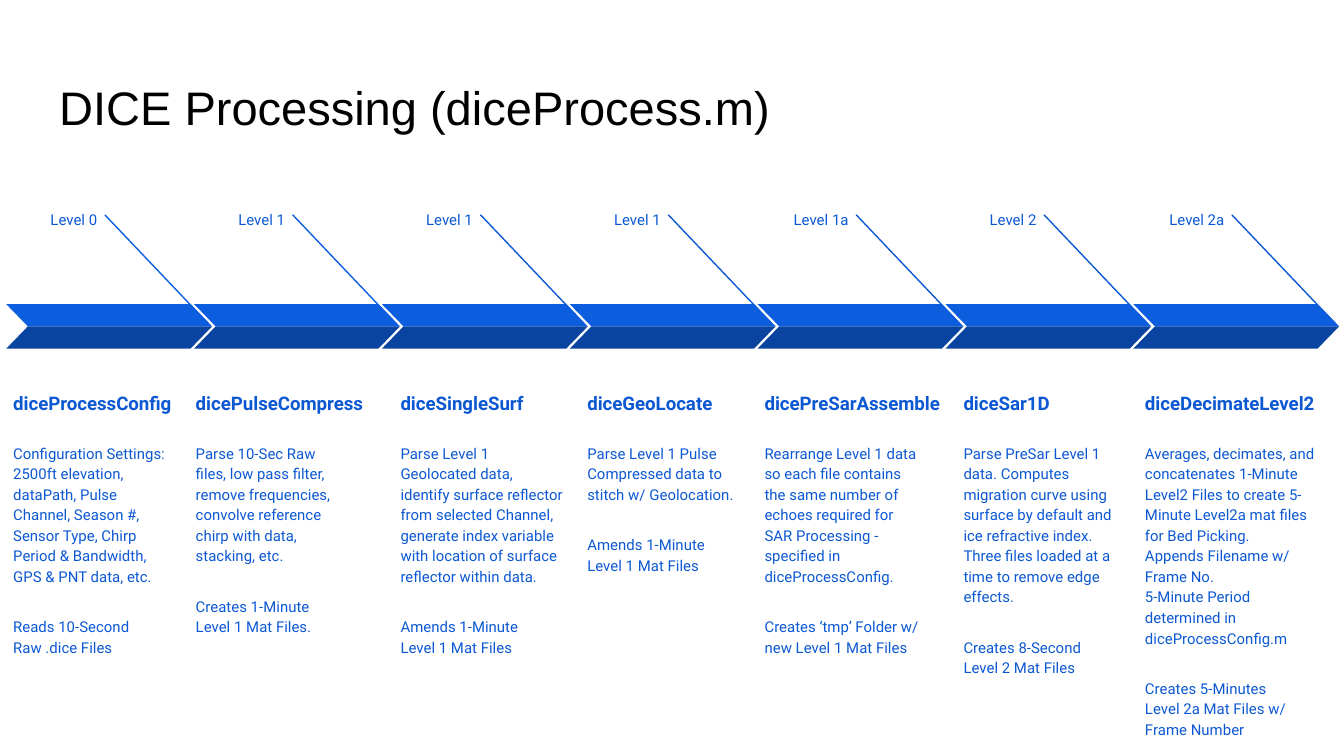
from copy import deepcopy

from lxml import etree
from pptx import Presentation
from pptx.dml.color import RGBColor
from pptx.enum.shapes import MSO_CONNECTOR, MSO_SHAPE
from pptx.enum.text import MSO_ANCHOR, PP_ALIGN
from pptx.oxml.ns import qn
from pptx.util import Cm, Pt

LEFT, RIGHT = PP_ALIGN.LEFT, PP_ALIGN.RIGHT
TOP, BOTTOM = MSO_ANCHOR.TOP, MSO_ANCHOR.BOTTOM
PARALLELOGRAM = MSO_SHAPE.PARALLELOGRAM
STRAIGHT = MSO_CONNECTOR.STRAIGHT

BLACK = RGBColor(0x00, 0x00, 0x00)
BRIGHT = RGBColor(0x0D, 0x5D, 0xDF)
DARK = RGBColor(0x09, 0x44, 0xA1)
TEXT_BLUE = RGBColor(0x0C, 0x58, 0xD3)

STAGE_LEFT, STAGE_TOP, STAGE_PITCH = 0.12, 3.73, 3.55
BAND_W, BAND_H, BAND_SLANT = 3.89, 0.42, 0.97

# level, function, text offset, heading width, body width, body height, task, output
STAGES = [
    ("Level 0", "diceProcessConfig", -0.12, 3.53, 3.43, 4.34,
     "Configuration Settings: 2500ft elevation, dataPath, Pulse Channel, Season #, "
     "Sensor Type, Chirp Period & Bandwidth, GPS & PNT data, etc.",
     "Reads 10-Second Raw .dice Files"),
    ("Level 1", "dicePulseCompress", -0.22, 3.68, 3.18, 3.4,
     "Parse 10-Sec Raw files, low pass filter, remove frequencies, convolve "
     "reference chirp with data, stacking, etc.",
     "Creates 1-Minute Level 1 Mat Files."),
    ("Level 1", "diceSingleSurf", 0.1, 3.2, 3.58, 4.06,
     "Parse Level 1 Geolocated data, identify surface reflector from selected "
     "Channel, generate index variable with location of surface reflector within data.",
     "Amends 1-Minute \nLevel 1 Mat Files"),
    ("Level 1", "diceGeoLocate", 0.08, 3.2, 3.35, 2.64,
     "Parse Level 1 Pulse Compressed data to stitch w/ Geolocation.",
     "Amends 1-Minute Level 1 Mat Files"),
    ("Level 1a", "dicePreSarAssemble", -0.12, 3.89, 3.45, 4.75,
     "Rearrange Level 1 data so each file contains the same number of echoes "
     "required for SAR Processing - specified in diceProcessConfig.",
     "Creates ‘tmp’ Folder w/ new Level 1 Mat Files"),
    ("Level 2", "diceSar1D", 0.09, 3.2, 3.43, 4.75,
     "Parse PreSar Level 1 data. Computes migration curve using surface by default "
     "and ice refractive index. Three files loaded at a time to remove edge effects.",
     "Creates 8-Second Level 2 Mat Files"),
    ("Level 2a", "diceDecimateLevel2", -0.03, 3.78, 3.99, 4.9,
     "Averages, decimates, and concatenates 1-Minute Level2 Files to create "
     "5-Minute Level2a mat files for Bed Picking. \nAppends Filename w/ Frame No.\n"
     "5-Minute Period determined in diceProcessConfig.m",
     "Creates 5-Minutes \nLevel 2a Mat Files w/ Frame Number"),
]


def add_text(s, x, y, w, h, *paragraphs, size=8, font="Roboto", color=TEXT_BLUE,
             bold=False, align=LEFT, anchor=TOP, line_spacing=1.15, after=0):
    """Add a text box; paragraphs after the first get space around them."""
    tf = s.shapes.add_textbox(Cm(x), Cm(y), Cm(w), Cm(h)).text_frame
    tf.word_wrap = True
    tf.vertical_anchor = anchor
    tf.margin_left = tf.margin_right = tf.margin_top = tf.margin_bottom = Cm(0.25)
    for i, text in enumerate(paragraphs):
        p = tf.add_paragraph() if i else tf.paragraphs[0]
        p.text = text
        p.alignment = align
        p.line_spacing = line_spacing
        p.space_before = Pt(16 if i else 0)
        p.space_after = Pt(16 if i else after)
        for r in p.runs:
            r.font.size, r.font.name, r.font.bold = Pt(size), font, bold
            r.font.color.rgb = color
        # Line breaks need the run format too, or they take the default height.
        for br in p._p.findall(qn("a:br")):
            br.append(deepcopy(p.runs[0]._r.rPr))


def add_band(s, x, y, color, flip=False):
    sp = s.shapes.add_shape(PARALLELOGRAM, Cm(x), Cm(y), Cm(BAND_W), Cm(BAND_H))
    sp.adjustments[0] = BAND_SLANT
    sp.shadow.inherit = False
    sp.fill.solid()
    sp.fill.fore_color.rgb = color
    sp.line.fill.background()
    if flip:
        sp._element.spPr.xfrm.set("flipH", "1")


def add_leader(s, x1, y1, x2, y2, color):
    line = s.shapes.add_connector(STRAIGHT, Cm(x1), Cm(y1), Cm(x2), Cm(y2))
    line.line.color.rgb = color
    line.line.width = Pt(0.75)
    etree.SubElement(line._element.spPr, qn("a:effectLst"))


def add_stage(s, x, y, stage, line_color):
    level, name, offset, name_w, body_w, body_h, task, output = stage
    add_leader(s, x + 1.86, y + 0.33, x + 3.82, y + 2.39, line_color)
    add_band(s, x, y + 2.02, BRIGHT, flip=True)
    add_band(s, x, y + 2.44, DARK)
    add_text(s, x + 0.27, y, 1.7, 0.66, level, align=RIGHT, after=16)
    add_text(s, x + offset, y + 3.1, name_w, 1.24, name,
             size=10, bold=True, anchor=BOTTOM)
    add_text(s, x + offset, y + 4.37, body_w, body_h, task, output)


def main():
    prs = Presentation()
    prs.slide_width, prs.slide_height = Cm(25.4), Cm(14.29)
    s = prs.slides.add_slide(prs.slide_layouts[6])
    add_text(s, 0.87, 1.24, 23.67, 1.6, "DICE Processing (diceProcess.m)",
             size=25.2, font="Arial", color=BLACK, line_spacing=1)
    for i, stage in enumerate(STAGES):
        add_stage(s, STAGE_LEFT + i * STAGE_PITCH, STAGE_TOP, stage,
                  BRIGHT if i < 2 else TEXT_BLUE)
    prs.save("out.pptx")


if __name__ == "__main__":
    main()
